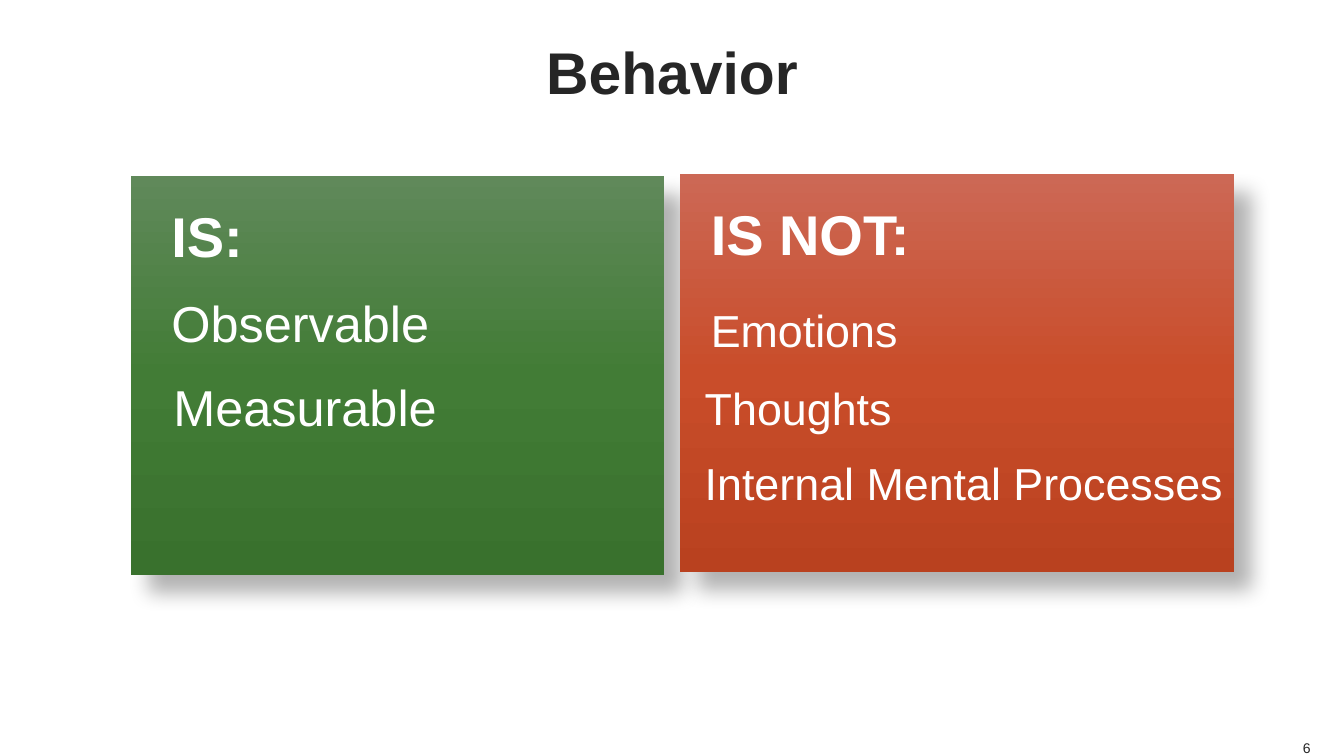
from copy import deepcopy

from lxml import etree
from pptx import Presentation
from pptx.dml.color import RGBColor
from pptx.enum.shapes import MSO_SHAPE
from pptx.enum.text import MSO_ANCHOR, MSO_AUTO_SIZE, PP_ALIGN
from pptx.oxml import parse_xml
from pptx.oxml.ns import qn
from pptx.util import Inches, Pt

RECT = MSO_SHAPE.RECTANGLE
LEFT, CENTER, RIGHT = PP_ALIGN.LEFT, PP_ALIGN.CENTER, PP_ALIGN.RIGHT
TOP, MIDDLE, BOTTOM = MSO_ANCHOR.TOP, MSO_ANCHOR.MIDDLE, MSO_ANCHOR.BOTTOM
NO_FIT = MSO_AUTO_SIZE.NONE
DARK, WHITE = "262626", "FFFFFF"
GREEN = ("60895A", "427C36", "39712D")
RED = ("CC6855", "C94D2A", "B9411F")
SHADOW = """<a:outerShdw xmlns:a="http://schemas.openxmlformats.org/drawingml/2006/main"
 blurRad="190500" dist="228600" dir="2700000" algn="tl" rotWithShape="0">
 <a:srgbClr val="000000"><a:alpha val="30000"/></a:srgbClr></a:outerShdw>"""


def color(code):
    """Turn a hex string into a colour."""
    return RGBColor.from_string(code)


def place(shape, box):
    """Move a shape to a box given in inches."""
    shape.left, shape.top, shape.width, shape.height = map(Inches, box)


def set_frame(frame, anchor, top=0, wrap=True):
    """Set the margins, anchor and wrapping of a text frame."""
    frame.margin_left = frame.margin_right = frame.margin_bottom = 0
    frame.margin_top = Inches(top)
    frame.vertical_anchor = anchor
    frame.auto_size = NO_FIT
    frame.word_wrap = wrap


def write(para, text, size, fill=DARK, bold=False, align=LEFT,
          indent=0, line=1, before=0):
    """Write formatted text into a paragraph."""
    if indent:
        para._p.get_or_add_pPr().set("indent", str(Inches(indent)))
    para.alignment = align
    para.line_spacing = line
    para.space_before = Pt(before)
    run = para.add_run()
    run.text = text
    font = run.font
    font.name, font.size, font.bold = "Arial", Pt(size), bold
    font.color.rgb = color(fill)


def add_title(slide, box, text):
    """Place and fill the title."""
    title = slide.shapes.title
    place(title, box)
    set_frame(title.text_frame, MIDDLE)
    write(title.text_frame.paragraphs[0], text, 42, bold=True, align=CENTER)


def add_panel(slide, box, shades, lines):
    """Draw a shaded panel with lines of (text, size, indent, space before)."""
    panel = slide.shapes.add_shape(RECT, *map(Inches, box))
    panel.line.fill.background()
    panel.fill.gradient()
    panel.fill.gradient_angle = 270
    stops = panel._element.spPr.find(".//" + qn("a:gsLst"))
    stops.insert(1, deepcopy(stops[0]))
    for stop, shade, pos in zip(panel.fill.gradient_stops, shades, (0, 0.5, 1)):
        stop.color.rgb = color(shade)
        stop.position = pos
    panel.shadow.inherit = False
    effects = panel._element.spPr.find(qn("a:effectLst"))
    effects.append(parse_xml(etree.tostring(etree.fromstring(SHADOW))))
    frame = panel.text_frame
    set_frame(frame, TOP, top=0.08)
    for i, (text, size, indent, before) in enumerate(lines):
        para = frame.add_paragraph() if i else frame.paragraphs[0]
        write(para, text, size, fill=WHITE, bold=i == 0,
              indent=indent, line=1.25, before=before)


def add_number(slide, box, text):
    """Add the slide number."""
    label = slide.shapes.add_textbox(*map(Inches, box))
    set_frame(label.text_frame, BOTTOM, wrap=False)
    write(label.text_frame.paragraphs[0], text, 10, align=RIGHT)


def main():
    """Build and save the slide."""
    deck = Presentation()
    deck.slide_width, deck.slide_height = Inches(13.33), Inches(7.5)
    slide = deck.slides.add_slide(deck.slide_layouts[5])
    add_title(slide, (0.5, 0, 12.33, 1.4), "Behavior")
    add_panel(slide, (1.3, 1.75, 5.29, 3.95), GREEN, [
        ("IS:", 40, 0.4, 0),
        ("Observable", 36, 0.4, 6),
        ("Measurable", 36, 0.42, 6)])
    add_panel(slide, (6.74, 1.73, 5.5, 3.95), RED, [
        ("IS NOT:", 40, 0.31, 0),
        ("Emotions", 32, 0.31, 16),
        ("Thoughts", 32, 0.25, 8),
        ("Internal Mental Processes", 32, 0.25, 6)])
    add_number(slide, (12.83, 7.33, 0.17, 0.17), "6")
    deck.save("out.pptx")


if __name__ == "__main__":
    main()
